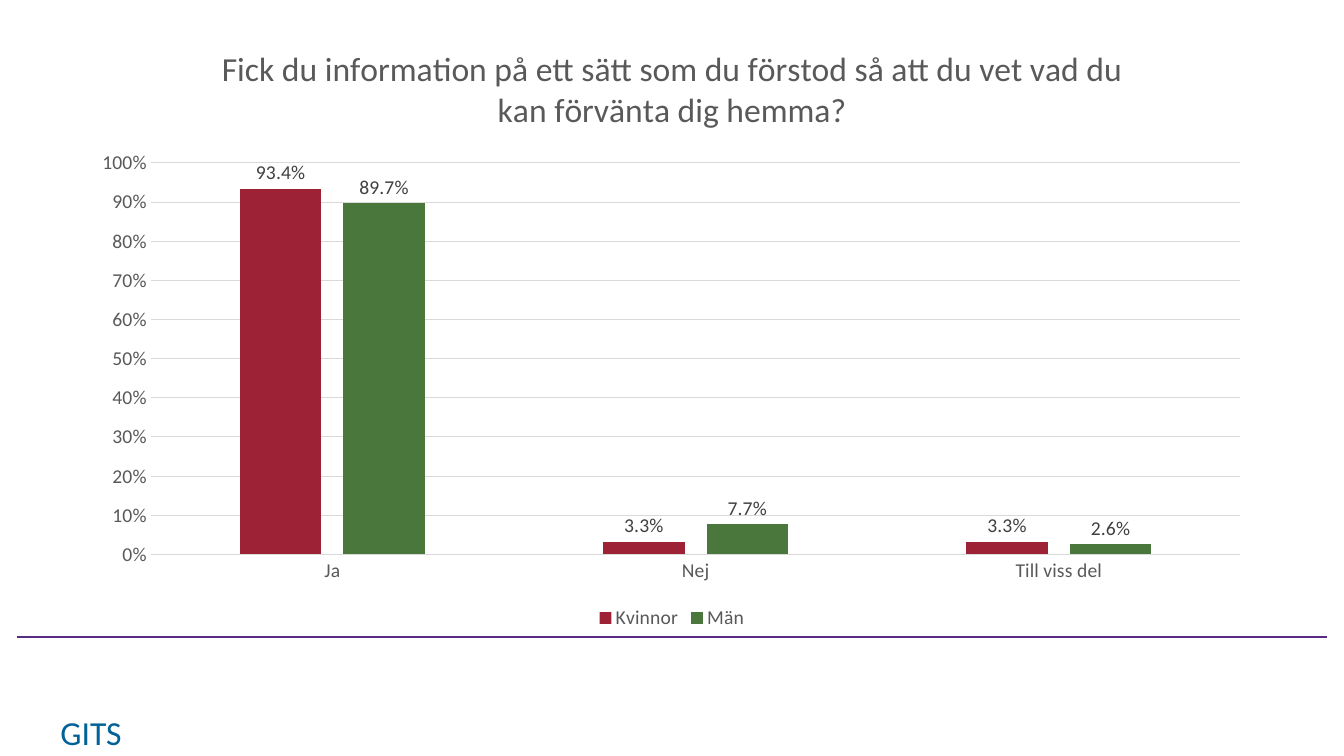
from lxml import etree
from pptx import Presentation
from pptx import util as u
from pptx.chart import data
from pptx.dml import color
from pptx.enum import chart as charts, shapes, text
from pptx.oxml import ns

TITLE = "Fick du information på ett sätt som du förstod så att du vet vad du kan förvänta dig hemma?"
ANSWERS = ["Ja", "Nej", "Till viss del"]
GROUPS = [
    ("Kvinnor", "9D2235", [0.934, 0.033, 0.033]),
    ("Män", "4A773C", [0.897, 0.077, 0.026]),
]
PLOT_AREA = {"x": 0.06, "y": 0.23, "w": 0.92, "h": 0.64}
GREY, GRID = "595959", "D9D9D9"


def rgb(value):
    return color.RGBColor.from_string(value)


class Survey:
    """Holds the font and the current page, and adds each kind of element."""

    def __init__(self, page, font="Calibri"):
        self.page = page
        self.font = font

    def style(self, font, size, colour):
        font.name = self.font
        font.size = u.Pt(size)
        font.bold = False
        font.color.rgb = rgb(colour)

    def label(self, left, top, width, height, words, size, colour):
        box = self.page.shapes.add_textbox(u.Cm(left), u.Cm(top), u.Cm(width), u.Cm(height))
        box.text_frame.word_wrap = False
        para = box.text_frame.paragraphs[0]
        para.text = words
        para.alignment = text.PP_ALIGN.CENTER
        self.style(para.runs[0].font, size, colour)

    def rule(self, left, right, top, colour):
        line = self.page.shapes.add_connector(
            shapes.MSO_CONNECTOR.STRAIGHT, u.Cm(left), u.Cm(top), u.Cm(right), u.Cm(top))
        line.line.color.rgb = rgb(colour)
        line.line.width = u.Pt(1)
        etree.SubElement(line._element.spPr, ns.qn("a:effectLst"))

    def columns(self, left, top, width, height):
        numbers = data.CategoryChartData(number_format="0.0%")
        numbers.categories = ANSWERS
        for name, _, values in GROUPS:
            numbers.add_series(name, values)
        chart = self.page.shapes.add_chart(
            charts.XL_CHART_TYPE.COLUMN_CLUSTERED,
            u.Cm(left), u.Cm(top), u.Cm(width), u.Cm(height), numbers).chart
        self.style(chart.font, 10, "000000")
        self.title(chart)
        self.axes(chart)
        self.bars(chart.plots[0])
        chart.has_legend = True
        chart.legend.position = charts.XL_LEGEND_POSITION.BOTTOM
        chart.legend.include_in_layout = False
        self.style(chart.legend.font, 14, GREY)
        self.place_plot(chart)

    def title(self, chart):
        chart.has_title = True
        chart.chart_title.include_in_layout = False
        para = chart.chart_title.text_frame.paragraphs[0]
        para.text = TITLE
        self.style(para.runs[0].font, 24, GREY)

    def axes(self, chart):
        for axis in (chart.category_axis, chart.value_axis):
            axis.major_tick_mark = axis.minor_tick_mark = charts.XL_TICK_MARK.NONE
            self.style(axis.tick_labels.font, 14, GREY)
        scale = chart.value_axis
        scale.minimum_scale, scale.maximum_scale, scale.major_unit = 0, 1, 0.1
        scale.tick_labels.number_format = "0%"
        scale.tick_labels.number_format_is_linked = False
        scale.format.line.fill.background()
        for part in (chart.category_axis, scale.major_gridlines):
            part.format.line.color.rgb = rgb(GRID)
            part.format.line.width = u.Pt(0.75)

    def bars(self, plot):
        plot.gap_width, plot.overlap = 219, -27
        plot.vary_by_categories = False
        for series, (_, colour, _) in zip(plot.series, GROUPS):
            series.format.fill.solid()
            series.format.fill.fore_color.rgb = rgb(colour)
            labels = series.data_labels
            labels.show_value = True
            labels.position = charts.XL_LABEL_POSITION.OUTSIDE_END
            labels.number_format = "0.0%"
            labels.number_format_is_linked = False
            self.style(labels.font, 14, "404040")

    def place_plot(self, chart):
        area = chart._chartSpace.find(".//" + ns.qn("c:plotArea"))
        for old in area.findall(ns.qn("c:layout")):
            area.remove(old)
        layout = etree.Element(ns.qn("c:layout"))
        area.insert(0, layout)
        manual = etree.SubElement(layout, ns.qn("c:manualLayout"))
        settings = {"layoutTarget": "inner", "xMode": "edge", "yMode": "edge", **PLOT_AREA}
        for key, value in settings.items():
            etree.SubElement(manual, ns.qn("c:" + key)).set("val", str(value))


def main():
    deck = Presentation()
    deck.slide_width, deck.slide_height = u.Cm(33.87), u.Cm(19.05)
    survey = Survey(deck.slides.add_slide(deck.slide_layouts[6]))
    survey.label(1.19, 17.81, 2.21, 1.27, "GITS", 24, "006298")
    survey.rule(0.43, 33.45, 16.05, "582C83")
    survey.columns(2.01, 0.56, 29.85, 15.42)
    deck.save("out.pptx")


if __name__ == "__main__":
    main()
